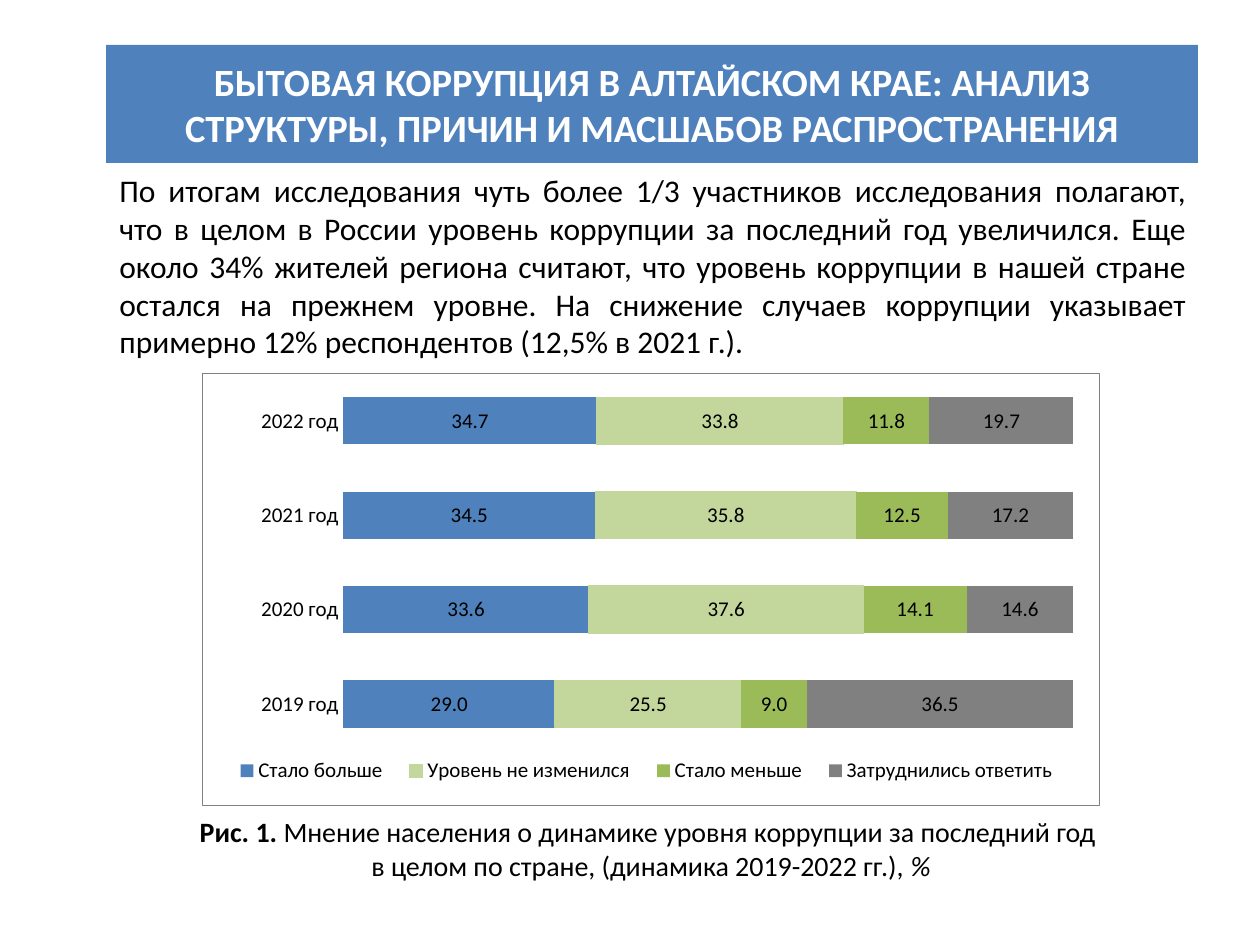
from lxml import etree
from pptx import Presentation
from pptx import util as u
from pptx.chart.data import CategoryChartData
from pptx.dml.color import RGBColor
from pptx.enum import chart as ch, shapes, text
from pptx.oxml import parse_xml
from pptx.oxml.ns import nsdecls, qn

PX = 914400 / 126

THEME = {
    "blue": "4F81BD", "pale": "C3D69B", "green": "9BBB59", "gray": "808080",
    "ink": "000000", "white": "FFFFFF", "face": "Calibri",
    "head": 22, "body": 18, "note": 16, "chart": 12,
}

# Each paragraph is a list of (text, font format) runs.
HEAD = [[("БЫТОВАЯ КОРРУПЦИЯ В АЛТАЙСКОМ КРАЕ: АНАЛИЗ СТРУКТУРЫ, "
          "ПРИЧИН И МАСШАБОВ РАСПРОСТРАНЕНИЯ", {"bold": True})]]
BODY = [[("По итогам исследования чуть более 1/3 участников исследования полагают, "
          "что в целом в России уровень коррупции за последний год увеличился. "
          "Еще около 34% жителей региона считают, что уровень коррупции в нашей "
          "стране остался на прежнем уровне. На снижение случаев коррупции указывает "
          "примерно 12% респондентов (12,5% в 2021 г.).", {})]]
NOTE = [
    [("Рис. 1. ", {"bold": True}),
     ("Мнение населения о динамике уровня коррупции за последний год ", {})],
    [("в целом по стране, (динамика 2019-2022 гг.), ", {}), ("%", {"italic": True})],
]
YEARS = ["2019 год", "2020 год", "2021 год", "2022 год"]
SERIES = [
    ("Стало больше", "blue", (29, 33.6, 34.5, 34.7)),
    ("Уровень не изменился", "pale", (25.5, 37.6, 35.8, 33.8)),
    ("Стало меньше", "green", (9, 14.1, 12.5, 11.8)),
    ("Затруднились ответить", "gray", (36.5, 14.6, 17.2, 19.7)),
]
BOXES = {  # left, top, width, height in px
    "head": (106, 45, 1092, 118), "body": (107, 165, 1092, 198),
    "chart": (202, 373, 898, 433), "note": (106, 808, 1090, 81),
}
PLOT = (0.157, 0, 0.814, 0.875)  # shares of the chart area
LEGEND = (0.02, 0.88, 0.95, 0.08)


def place(name):
    return [u.Emu(round(n * PX)) for n in BOXES[name]]


def color(name):
    return RGBColor.from_string(THEME[name])


def style(font, size, ink="ink", **more):
    form = {"name": THEME["face"], "size": u.Pt(THEME[size]), **more}
    for key, val in form.items():
        setattr(font, key, val)
    font.color.rgb = color(ink)


def write(shape, paras, size, align, anchor, ink="ink"):
    frame = shape.text_frame
    frame.word_wrap = True
    frame.vertical_anchor = anchor
    for i, runs in enumerate(paras):
        para = frame.add_paragraph() if i else frame.paragraphs[0]
        para.alignment = align
        for words, form in runs:
            run = para.add_run()
            run.text = words
            style(run.font, size, ink, **form)


def layout(parent, index, box, inner=False):
    """Fix the place of a chart part, as shares of the chart area."""
    for old in parent.findall(qn("c:layout")):
        parent.remove(old)
    target = '<c:layoutTarget val="inner"/>' if inner else ""
    modes = "".join(f'<c:{k}Mode val="edge"/>' for k in "xy")
    sizes = "".join(f'<c:{k} val="{v}"/>' for k, v in zip("xywh", box))
    parent.insert(index, parse_xml(
        f'<c:layout {nsdecls("c")}><c:manualLayout>{target}{modes}{sizes}'
        "</c:manualLayout></c:layout>"))


def frame_chart(chart):
    """Give the chart area its fill and border."""
    fill = '<a:solidFill><a:srgbClr val="{}"/></a:solidFill>'
    area = parse_xml(
        f'<c:spPr {nsdecls("c", "a")}>{fill.format(THEME["white"])}'
        f'<a:ln w="9525">{fill.format(THEME["gray"])}</a:ln></c:spPr>')
    chart.element.find(qn("c:chart")).addnext(area)


def add_bars(slide):
    data = CategoryChartData(number_format="0.0")
    data.categories = YEARS
    for name, _, vals in SERIES:
        data.add_series(name, vals)
    chart = slide.shapes.add_chart(
        ch.XL_CHART_TYPE.BAR_STACKED_100, *place("chart"), data).chart
    style(chart.font, "chart")
    chart.has_title = False
    frame_chart(chart)

    plot = chart.plots[0]
    plot.gap_width, plot.overlap, plot.vary_by_categories = 100, 100, False
    for bars, (_, hue, _) in zip(plot.series, SERIES):
        bars.format.fill.solid()
        bars.format.fill.fore_color.rgb = color(hue)
        tags = bars.data_labels
        tags.show_value = True
        tags.number_format, tags.number_format_is_linked = "0.0", False
        style(tags.font, "chart")
    edge = plot.series[1].format.line
    edge.width = u.Pt(0.75)
    edge.color.rgb = color("pale")

    years, scale = chart.category_axis, chart.value_axis
    years.major_tick_mark = ch.XL_TICK_MARK.NONE
    years.format.line.fill.background()
    style(years.tick_labels.font, "chart")
    scale.has_major_gridlines = False
    scale.visible = False

    chart.has_legend = True
    key = chart.legend
    key.position = ch.XL_LEGEND_POSITION.BOTTOM
    key.include_in_layout = False
    style(key.font, "chart")
    area = chart.element.find(".//" + qn("c:plotArea"))
    layout(area, 0, PLOT, inner=True)
    layout(chart.element.find(".//" + qn("c:legend")), 1, LEGEND)


def main():
    deck = Presentation()
    deck.slide_width, deck.slide_height = u.Inches(10), u.Inches(7.5)
    slide = deck.slides.add_slide(deck.slide_layouts[6])
    align, anchor = text.PP_ALIGN, text.MSO_ANCHOR

    body = slide.shapes.add_textbox(*place("body"))
    write(body, BODY, "body", align.JUSTIFY, anchor.TOP)
    note = slide.shapes.add_textbox(*place("note"))
    write(note, NOTE, "note", align.CENTER, anchor.MIDDLE)

    head = slide.shapes.add_shape(shapes.MSO_SHAPE.RECTANGLE, *place("head"))
    head.shadow.inherit = False
    head.fill.solid()
    head.fill.fore_color.rgb = color("blue")
    head.line.fill.background()
    write(head, HEAD, "head", align.CENTER, anchor.MIDDLE, "white")

    add_bars(slide)
    deck.save("out.pptx")


if __name__ == "__main__":
    main()
